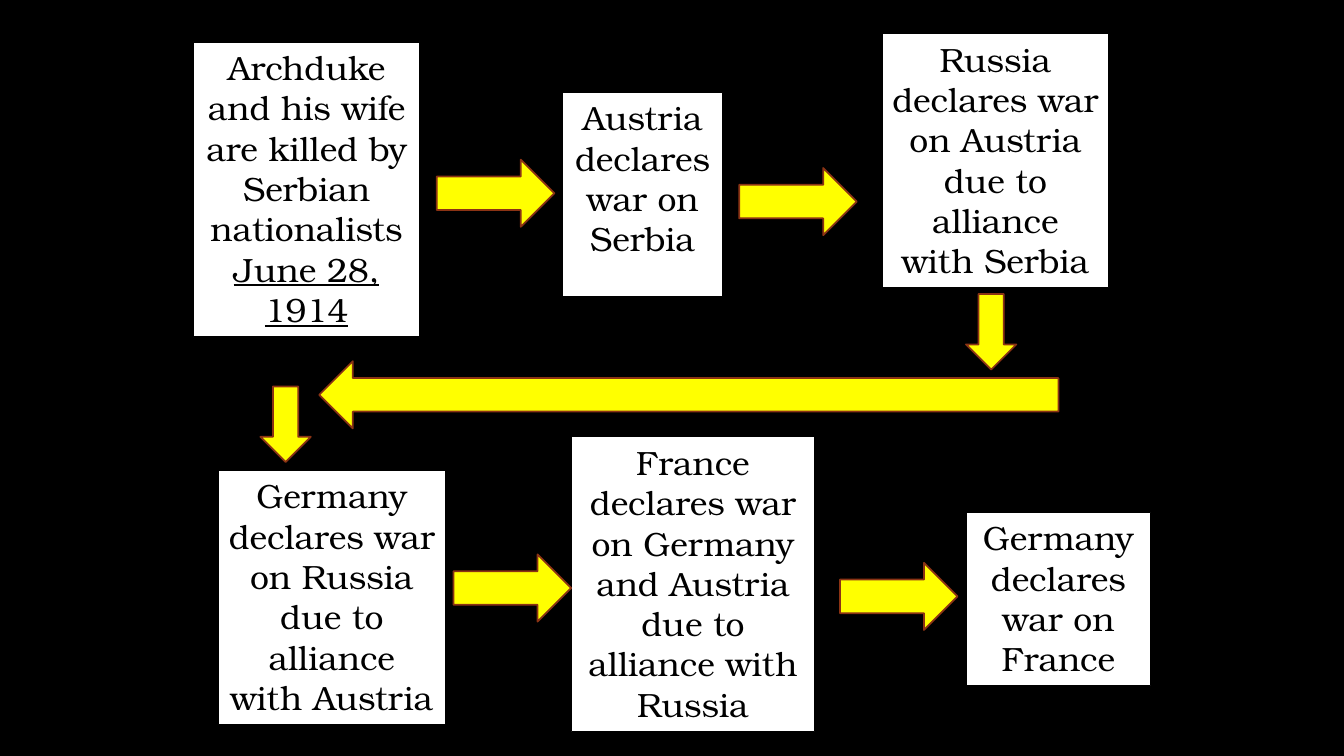
from dataclasses import dataclass

from pptx import Presentation
from pptx.dml.color import RGBColor
from pptx.enum.shapes import MSO_SHAPE
from pptx.enum.text import MSO_ANCHOR, PP_ALIGN
from pptx.util import Pt

SCALE = 9525


@dataclass(frozen=True)
class Theme:
    """Colours, font and sizes of the slide."""
    black: RGBColor = RGBColor(0, 0, 0)
    white: RGBColor = RGBColor(255, 255, 255)
    yellow: RGBColor = RGBColor(255, 255, 0)
    brown: RGBColor = RGBColor(0x8B, 0x33, 0x14)
    font: str = "TeX Gyre Bonum"
    size: Pt = Pt(24)
    thin: Pt = Pt(0.75)
    thick: Pt = Pt(1.25)


THEME = Theme()

EVENTS = [
    (184, 40, 216, 281, "Archduke and his wife are killed by Serbian nationalists",
     "June 28, 1914"),
    (536, 88, 152, 194, "Austria declares war on Serbia"),
    (840, 32, 216, 242, "Russia declares war on Austria due to alliance with Serbia"),
    (208, 448, 216, 242, "Germany declares war on Russia due to alliance with Austria"),
    (544, 416, 232, 281,
     "France declares war on Germany and Austria due to alliance with Russia"),
    (920, 488, 176, 165, "Germany declares war on France"),
]
RIGHT = [(416, 152), (704, 160), (432, 528), (800, 536)]
DOWN = [(920, 280), (248, 368)]


def px(count):
    """Turn px into EMU."""
    return count * SCALE


def add_block(slide, kind, box, fill, line, width):
    """Add a filled and outlined preset shape."""
    shape = slide.shapes.add_shape(kind, *map(px, box))
    shape.shadow.inherit = False
    shape.fill.solid()
    shape.fill.fore_color.rgb = fill
    shape.line.color.rgb = line
    shape.line.width = width
    return shape


def add_event(slide, box, text, date=None):
    """Add an event box, with an underlined date if there is one."""
    shape = add_block(slide, MSO_SHAPE.RECTANGLE, box,
                      THEME.white, THEME.black, THEME.thin)
    frame = shape.text_frame
    frame.word_wrap = True
    frame.vertical_anchor = MSO_ANCHOR.TOP
    frame.text = text
    if date:
        frame.add_paragraph().text = date
        frame.paragraphs[-1].runs[0].font.underline = True
    for para in frame.paragraphs:
        para.alignment = PP_ALIGN.CENTER
        font = para.runs[0].font
        font.name = THEME.font
        font.size = THEME.size
        font.color.rgb = THEME.black


def add_arrow(slide, kind, box, turn=0):
    """Add a yellow block arrow."""
    shape = add_block(slide, kind, box, THEME.yellow, THEME.brown, THEME.thick)
    shape.rotation = turn


def main():
    """Build the slide and save it."""
    deck = Presentation()
    deck.slide_width, deck.slide_height = px(1280), px(720)
    slide = deck.slides.add_slide(deck.slide_layouts[6])
    back = slide.background.fill
    back.solid()
    back.fore_color.rgb = THEME.black
    for left, top, wide, high, *words in EVENTS:
        add_event(slide, (left, top, wide, high), *words)
    for left, top in RIGHT:
        add_arrow(slide, MSO_SHAPE.RIGHT_ARROW, (left, top, 112, 64))
    for left, top in DOWN:
        add_arrow(slide, MSO_SHAPE.DOWN_ARROW, (left, top, 48, 72))
    add_arrow(slide, MSO_SHAPE.RIGHT_ARROW, (304, 344, 704, 64), 180)
    deck.save("out.pptx")


if __name__ == "__main__":
    main()
